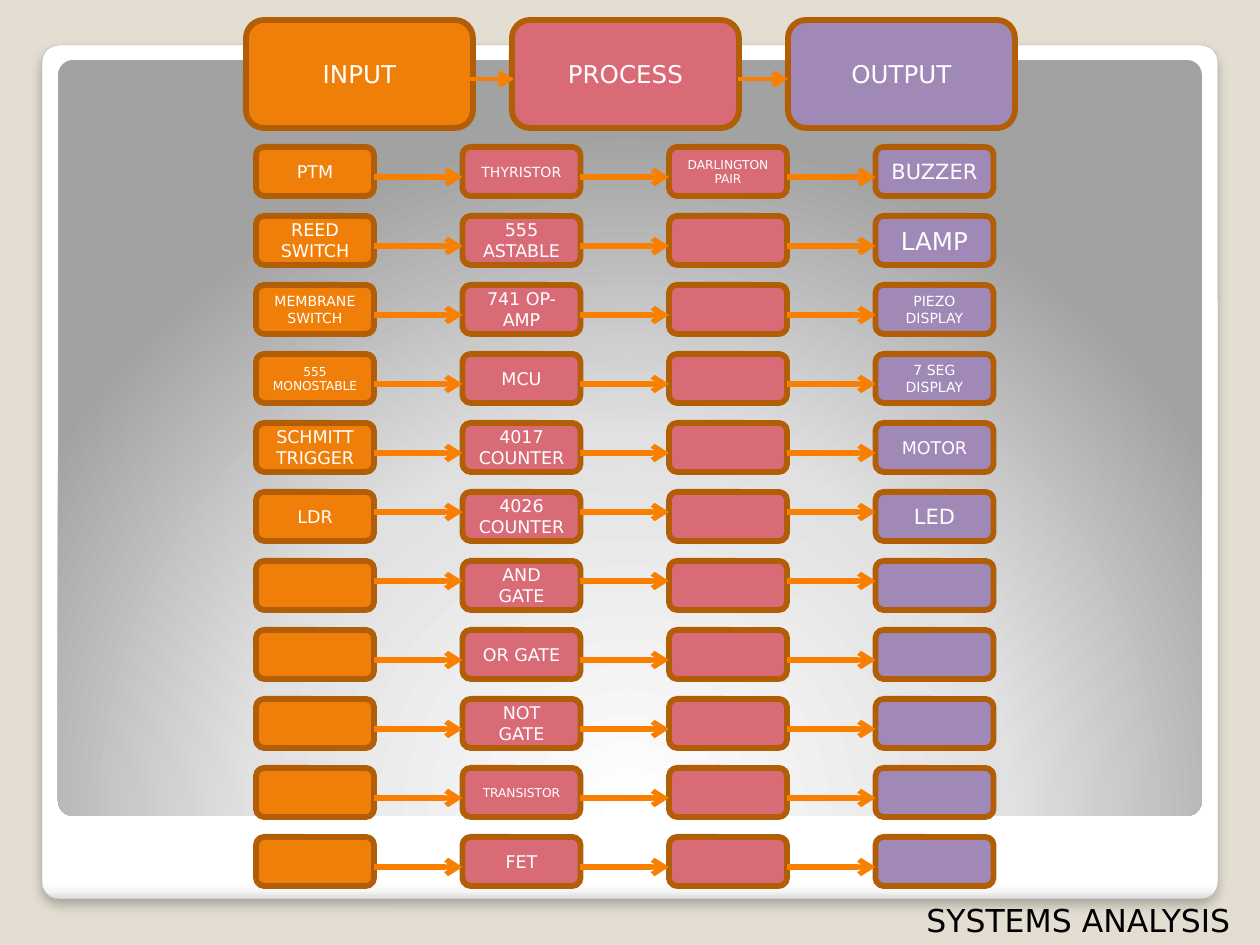
from pptx import Presentation, util as u, oxml
from pptx.dml.color import RGBColor
from pptx.enum import shapes, text
from pptx.oxml import ns

PX = 914400 // 126
FONT = "DejaVu Sans"
HUE = {"back": "E3DED1", "in": "F07F09", "mid": "D96B77", "out": "A088B7",
       "edge": "B25E07", "arrow": "F97F00", "rim": "A4A4A4",
       "light": "FFFFFF", "dark": "000000"}

TITLE = "SYSTEMS ANALYSIS"
HEADS = [("INPUT", "in", 246), ("PROCESS", "mid", 512), ("OUTPUT", "out", 788)]
LINKS = [(462, 514), (738, 788)]
COLS = [
    ("in", [("PTM", 10), ("REED SWITCH", 10), ("MEMBRANE SWITCH", 8),
            ("555 MONOSTABLE", 7), ("SCHMITT TRIGGER", 10), ("LDR", 10)]),
    ("mid", [("THYRISTOR", 8), ("555 ASTABLE", 10), ("741 OP- AMP", 10),
             ("MCU", 10), ("4017 COUNTER", 10), ("4026 COUNTER", 10),
             ("AND GATE", 10), ("OR GATE", 10), ("NOT GATE", 10),
             ("TRANSISTOR", 7), ("FET", 10)]),
    ("mid", [("DARLINGTON PAIR", 7)]),
    ("out", [("BUZZER", 12), ("LAMP", 14), ("PIEZO DISPLAY", 8),
             ("7 SEG DISPLAY", 8), ("MOTOR", 10), ("LED", 12)]),
]
ROWS = 11
LEFT, TOP, WIDE, HIGH = 256, 147, 118, 49
STEP_X, STEP_Y = 413 / 2, 69
HIGH_ROWS = (5, 6)

FRAME = ([(0, "FFFFFF"), (98, "FFFFFF"), (99, "F7F7F7"), (100, "DADADA")],
         '<a:lin ang="5400000" scaled="0"/>')
PANEL = ([(0, "FFFFFF"), (55, "E1E1E1"), (100, "A2A2A2")],
         '<a:path path="circle"><a:fillToRect l="50000" t="175000" '
         'r="50000" b="-75000"/></a:path>')
SHADE = ('<a:effectLst %s><a:outerShdw blurRad="76200" dist="50800" '
         'dir="5400000" algn="t" rotWithShape="0"><a:srgbClr val="000000">'
         '<a:alpha val="25000"/></a:srgbClr></a:outerShdw></a:effectLst>')


def rgb(key):
    return RGBColor.from_string(HUE[key])


def node(xml):
    return oxml.parse_xml(xml % ns.nsdecls("a"))


def style(frame, size, key):
    for par in frame.paragraphs:
        for run in par.runs:
            run.font.size = u.Pt(size)
            run.font.name = FONT
            run.font.color.rgb = rgb(key)


def round_box(slide, *area):
    box = slide.shapes.add_shape(shapes.MSO_SHAPE.ROUNDED_RECTANGLE,
                                 *[round(n * PX) for n in area])
    box.shadow.inherit = False
    return box


def plate(slide, area, grad):
    box = round_box(slide, *area)
    box.adjustments[0] = 0.02
    box.line.fill.background()
    stops, kind = grad
    marks = "".join(f'<a:gs pos="{pos * 1000}"><a:srgbClr val="{hue}"/></a:gs>'
                    for pos, hue in stops)
    fill = node("<a:gradFill %s><a:gsLst>" + marks + "</a:gsLst>" + kind
                + "</a:gradFill>")
    box._element.spPr.insert(2, fill)
    return box


def block(slide, area, key, words="", size=10):
    box = round_box(slide, *area)
    box.fill.solid()
    box.fill.fore_color.rgb = rgb(key)
    box.line.color.rgb = rgb("edge")
    box.line.width = u.Pt(3.35)
    if words:
        frame = box.text_frame
        frame.text = words
        frame.word_wrap = True
        frame.vertical_anchor = text.MSO_ANCHOR.MIDDLE
        frame.paragraphs[0].alignment = text.PP_ALIGN.CENTER
        style(frame, size, "light")


def arrow(slide, start, end, y, width):
    line = slide.shapes.add_connector(
        shapes.MSO_CONNECTOR.STRAIGHT,
        *[round(n * PX) for n in (start, y, end, y)])
    line.line.color.rgb = rgb("arrow")
    line.line.width = u.Pt(width)
    line.line._get_or_add_ln().append(node('<a:tailEnd %s type="arrow"/>'))
    line._element.spPr.append(node("<a:effectLst %s/>"))


def main():
    deck = Presentation()
    deck.slide_width, deck.slide_height = u.Inches(10), u.Inches(7.5)
    slide = deck.slides.add_slide(deck.slide_layouts[6])
    slide.background.fill.solid()
    slide.background.fill.fore_color.rgb = rgb("back")

    frame = plate(slide, (42, 45, 1176, 854), FRAME)
    frame.line.color.rgb = rgb("rim")
    frame.line.width = u.Pt(0.16)
    props = frame._element.spPr
    props.replace(props.find(ns.qn("a:effectLst")), node(SHADE))
    plate(slide, (58, 60, 1144, 756), PANEL)

    for col, (key, cells) in enumerate(COLS):
        x = LEFT + col * STEP_X
        for row in range(ROWS):
            words, size = cells[row] if row < len(cells) else ("", 10)
            area = (x, TOP + row * STEP_Y, WIDE, HIGH)
            block(slide, area, key, words, size)

    for col in range(len(COLS) - 1):
        x = LEFT + col * STEP_X
        for row in range(ROWS):
            drop = 20 if row in HIGH_ROWS else 30
            arrow(slide, x + WIDE, x + STEP_X, TOP + row * STEP_Y + drop, 3)

    for words, key, x in HEADS:
        block(slide, (x, 20, 227, 108), key, words, 14)
    for start, end in LINKS:
        arrow(slide, start, end, 79, 2.75)

    title = slide.shapes.add_textbox(*[n * PX for n in (914, 895, 358, 50)])
    title.text_frame.text = TITLE
    title.text_frame.word_wrap = False
    title.text_frame.auto_size = text.MSO_AUTO_SIZE.SHAPE_TO_FIT_TEXT
    style(title.text_frame, 18, "dark")

    deck.save("out.pptx")


if __name__ == "__main__":
    main()
